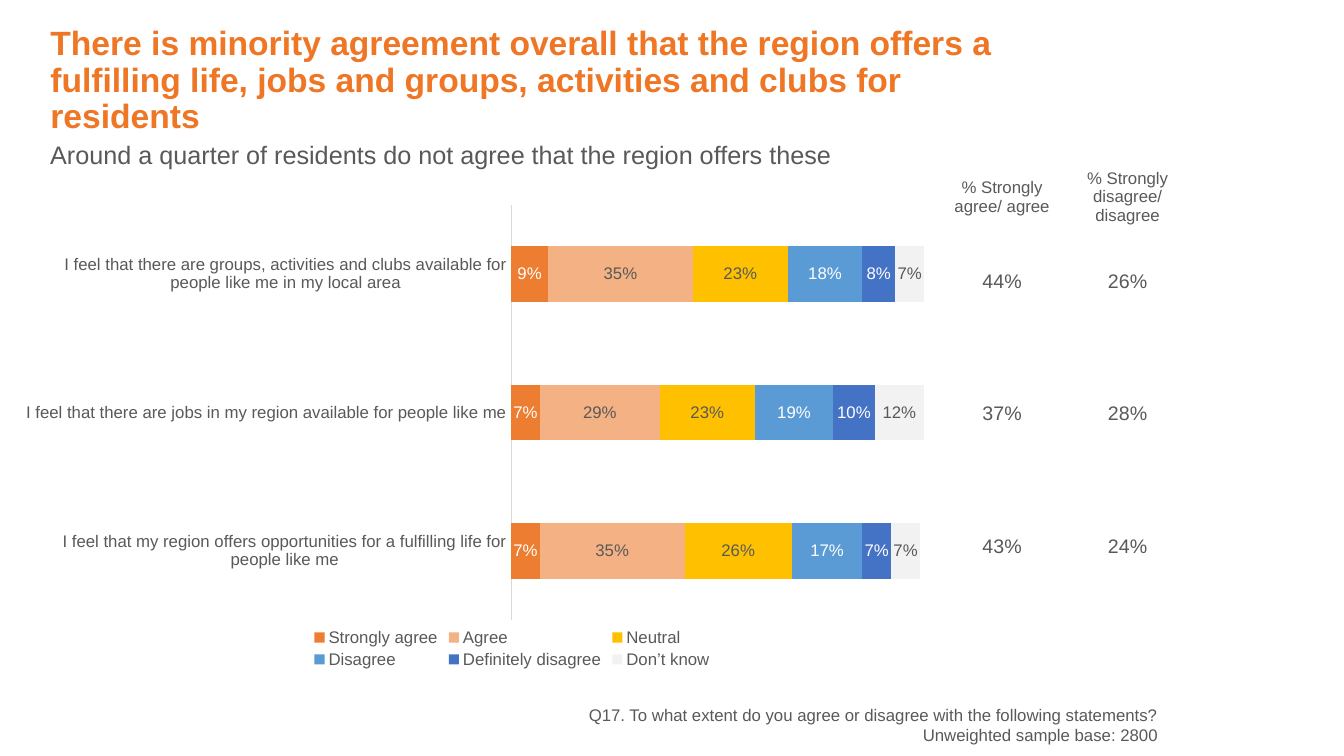
import pptx
import pptx.chart.data
import pptx.dml.color
import pptx.enum.chart
import pptx.enum.text
import pptx.oxml
import pptx.util
from pptx.oxml.ns import nsdecls

Pt = pptx.util.Pt
RGBColor = pptx.dml.color.RGBColor
Align = pptx.enum.text.PP_ALIGN
Anchor = pptx.enum.text.MSO_ANCHOR
ChartKind = pptx.enum.chart

FONT = "Arial"
WHITE = RGBColor(0xFF, 0xFF, 0xFF)
GREY = RGBColor(0x59, 0x59, 0x59)
AXIS_GREY = RGBColor(0xD9, 0xD9, 0xD9)
TITLE_ORANGE = RGBColor(0xEE, 0x76, 0x24)
ORANGE = RGBColor(0xED, 0x7D, 0x31)
PEACH = RGBColor(0xF4, 0xB1, 0x83)
YELLOW = RGBColor(0xFF, 0xC0, 0x00)
LIGHT_BLUE = RGBColor(0x5B, 0x9B, 0xD5)
BLUE = RGBColor(0x44, 0x72, 0xC4)
PALE_GREY = RGBColor(0xF2, 0xF2, 0xF2)

TITLE = ("There is minority agreement overall that the region offers a fulfilling life, "
         "jobs and groups, activities and clubs for residents")
SUBTITLE = "Around a quarter of residents do not agree that the region offers these"
SOURCE = ["Q17. To what extent do you agree or disagree with the following statements?",
          "Unweighted sample base: 2800"]
STATEMENTS = [
    "I feel that my region offers opportunities for a fulfilling life for people like me",
    "I feel that there are jobs in my region available for people like me",
    "I feel that there are groups, activities and clubs available for people like me in my local area",
]
ANSWERS = [
    ("Strongly agree", (0.07, 0.07, 0.09), ORANGE, WHITE),
    ("Agree", (0.35, 0.29, 0.35), PEACH, GREY),
    ("Neutral", (0.26, 0.23, 0.23), YELLOW, GREY),
    ("Disagree", (0.17, 0.19, 0.18), LIGHT_BLUE, WHITE),
    ("Definitely disagree", (0.07, 0.1, 0.08), BLUE, WHITE),
    ("Don’t know", (0.07, 0.12, 0.07), PALE_GREY, GREY),
]
SUMMARY_HEADINGS = ("% Strongly agree/ agree", "% Strongly disagree/ disagree")
SUMMARY = [("44%", "26%"), ("37%", "28%"), ("43%", "24%")]

TITLE_BOX = (28.8, 26.64, 707, 62.64)
SUBTITLE_BOX = (28.8, 95.76, 657.4, 28.8)
CHART_BOX = (12.24, 135.36, 707, 344.9)
SOURCE_BOX = (120.24, 503.28, 707, 28.8)
TABLE_BOX = (671, 103.7, 179.3, 311)
HEADING_HEIGHT, FIRST_ROW_HEIGHT, ROW_HEIGHT = 74.2, 46.1, 47.5
PLOT_AREA = {"x": 0.499, "y": 0.032, "w": 0.501, "h": 0.86}


def lengths(box):
    return [Pt(value) for value in box]


def style_font(font, size, color, bold=False):
    font.name = FONT
    font.size = Pt(size)
    font.bold = bold
    font.color.rgb = color


def write(frame, lines, size=12, color=GREY, bold=False, align=Align.LEFT, spacing=None):
    for index, line in enumerate(lines):
        para = frame.paragraphs[0] if index == 0 else frame.add_paragraph()
        para.alignment = align
        if spacing:
            para.line_spacing = spacing
        span = para.add_run()
        span.text = line
        style_font(span.font, size, color, bold)


def add_title(page):
    title = page.shapes.title
    title.left, title.top, title.width, title.height = lengths(TITLE_BOX)
    frame = title.text_frame
    frame.word_wrap = True
    frame.auto_size = pptx.enum.text.MSO_AUTO_SIZE.NONE
    frame.vertical_anchor = Anchor.MIDDLE
    write(frame, [TITLE], size=24, color=TITLE_ORANGE, bold=True, spacing=0.9)


def add_text_box(page, box):
    frame = page.shapes.add_textbox(*lengths(box)).text_frame
    frame.word_wrap = True
    return frame


def add_answer_chart(page):
    data = pptx.chart.data.CategoryChartData(number_format="0%")
    data.categories = STATEMENTS
    for name, values, _, _ in ANSWERS:
        data.add_series(name, values)
    chart = page.shapes.add_chart(
        ChartKind.XL_CHART_TYPE.BAR_STACKED, *lengths(CHART_BOX), data).chart
    chart.has_title = False
    style_font(chart.font, 12, GREY)

    plot = chart.plots[0]
    plot.gap_width = 150
    plot.overlap = 100
    plot.vary_by_categories = False
    for series, (_, _, color, label_color) in zip(plot.series, ANSWERS):
        series.format.fill.solid()
        series.format.fill.fore_color.rgb = color
        series.invert_if_negative = False
        labels = series.data_labels
        labels.show_value = True
        labels.number_format = "0%"
        labels.number_format_is_linked = False
        style_font(labels.font, 12, label_color)

    statements = chart.category_axis
    statements.major_tick_mark = ChartKind.XL_TICK_MARK.NONE
    statements.format.line.color.rgb = AXIS_GREY
    statements.format.line.width = Pt(0.75)
    style_font(statements.tick_labels.font, 12, GREY)
    shares = chart.value_axis
    shares.minimum_scale = 0
    shares.maximum_scale = 1.2
    shares.has_major_gridlines = False
    shares.visible = False

    chart.has_legend = True
    chart.legend.position = ChartKind.XL_LEGEND_POSITION.BOTTOM
    chart.legend.include_in_layout = False
    style_font(chart.legend.font, 12, GREY)

    sizes = "".join(f'<c:{key} val="{value}"/>' for key, value in PLOT_AREA.items())
    layout = pptx.oxml.parse_xml(
        f'<c:layout {nsdecls("c")}><c:manualLayout><c:layoutTarget val="inner"/>'
        f'<c:xMode val="edge"/><c:yMode val="edge"/>{sizes}</c:manualLayout></c:layout>')
    plot_area = chart.element.chart.plotArea
    for old_layout in plot_area.findall(pptx.oxml.ns.qn("c:layout")):
        plot_area.remove(old_layout)
    plot_area.insert(0, layout)


def add_summary_table(page):
    row_count = 2 * len(SUMMARY)
    table = page.shapes.add_table(
        row_count, len(SUMMARY_HEADINGS), *lengths(TABLE_BOX)).table
    table.first_row = False
    table.horz_banding = False
    heights = [HEADING_HEIGHT, FIRST_ROW_HEIGHT] + [ROW_HEIGHT] * (row_count - 2)
    for row, height in zip(table.rows, heights):
        row.height = Pt(height)
    for cell in table.iter_cells():
        cell.fill.background()
        cell.vertical_anchor = Anchor.MIDDLE
    for column, heading in enumerate(SUMMARY_HEADINGS):
        write(table.cell(0, column).text_frame, [heading], align=Align.CENTER)
        for index, shares in enumerate(SUMMARY):
            cell = table.cell(2 * index + 1, column)
            write(cell.text_frame, [shares[column]], size=14, align=Align.CENTER)


def main():
    deck = pptx.Presentation()
    deck.slide_width, deck.slide_height = Pt(960), Pt(540)
    page = deck.slides.add_slide(deck.slide_layouts[5])
    add_title(page)
    add_answer_chart(page)

    source = add_text_box(page, SOURCE_BOX)
    source.margin_left = source.margin_right = source.margin_top = source.margin_bottom = 0
    source.vertical_anchor = Anchor.MIDDLE
    write(source, SOURCE, align=Align.RIGHT)

    add_summary_table(page)
    write(add_text_box(page, SUBTITLE_BOX), [SUBTITLE], size=18)
    deck.save("out.pptx")


if __name__ == "__main__":
    main()
